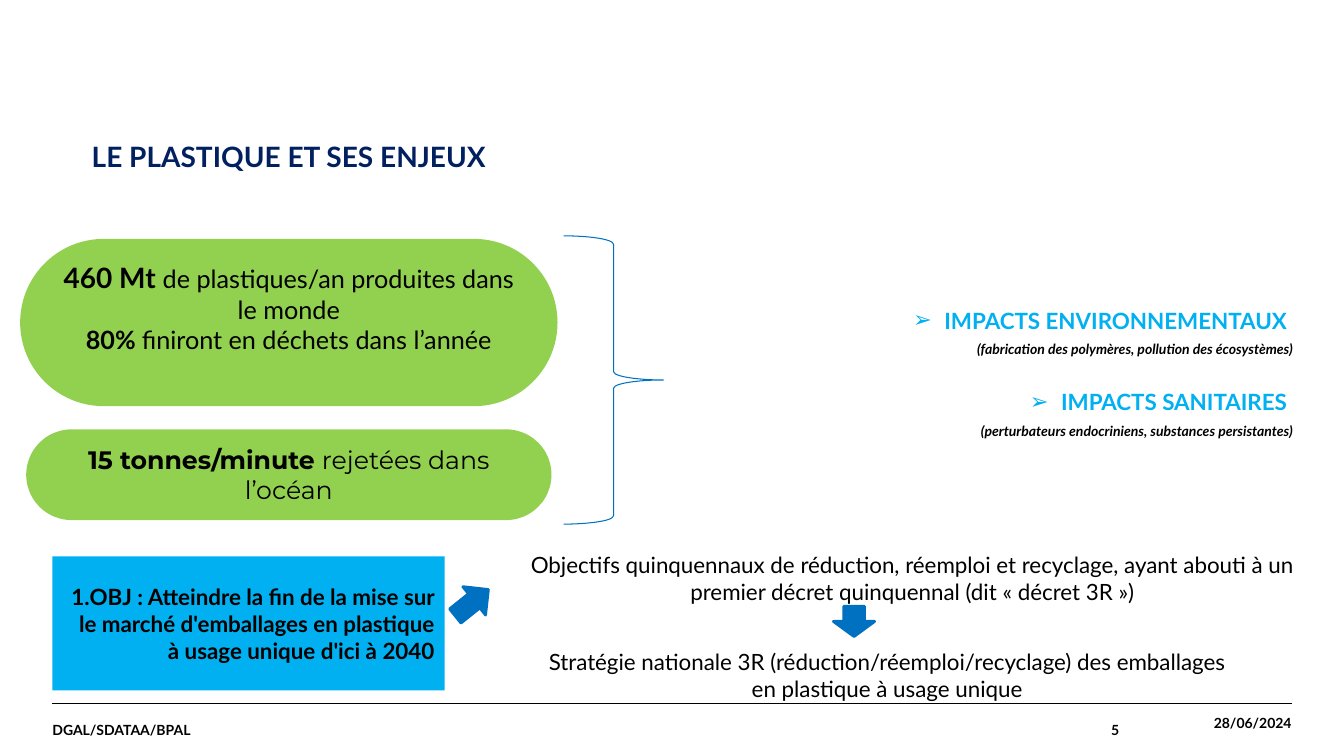
from dataclasses import dataclass

from lxml import etree
from pptx import Presentation
from pptx import util as u
from pptx.dml.color import RGBColor
from pptx.enum import shapes, text
from pptx.oxml.ns import qn

EMU_PER_PX = 9144
LEFT, CENTER, RIGHT = text.PP_ALIGN.LEFT, text.PP_ALIGN.CENTER, text.PP_ALIGN.RIGHT
TOP, MIDDLE = text.MSO_ANCHOR.TOP, text.MSO_ANCHOR.MIDDLE
ARROW_BULLET = ("buChar", {"char": "➢"})
NUMBER = ("buAutoNum", {"type": "arabicPeriod"})


@dataclass(frozen=True)
class Theme:
    font: str = "Lato"
    accent_font: str = "Montserrat"
    black: str = "000000"
    navy: str = "002060"
    blue: str = "0070C0"
    sky: str = "00B0F0"
    green: str = "92D050"
    title: int = 20
    figure: int = 18
    body: int = 16
    small: int = 10


THEME = Theme()


def px(length):
    return u.Emu(length * EMU_PER_PX)


@dataclass
class Para:
    """A paragraph; runs are (words, font overrides) pairs."""
    runs: list
    size: int = THEME.body
    color: str = THEME.black
    bold: bool = None
    italic: bool = None
    font: str = THEME.font
    align: int = CENTER
    before: float = 0
    bullet: tuple = None
    indent: int = 0


class SlideBuilder:
    def __init__(self, slide, theme):
        self.slide = slide
        self.theme = theme

    def fill_text(self, frame, paras, anchor=MIDDLE, insets=(10, 10, 10, 10)):
        frame.word_wrap = True
        frame.auto_size = text.MSO_AUTO_SIZE.NONE
        frame.vertical_anchor = anchor
        (frame.margin_left, frame.margin_top,
         frame.margin_right, frame.margin_bottom) = map(px, insets)
        for index, para in enumerate(paras):
            line = frame.paragraphs[0] if index == 0 else frame.add_paragraph()
            line.alignment = para.align
            line.space_before = u.Pt(para.before)
            self.set_bullet(line, para)
            line.font.name = para.font
            line.font.size = u.Pt(para.size)
            line.font.bold = para.bold
            line.font.italic = para.italic
            line.font.color.rgb = RGBColor.from_string(para.color)
            for words, overrides in para.runs:
                run = line.add_run()
                run.text = words
                if "size" in overrides:
                    run.font.size = u.Pt(overrides["size"])
                if "bold" in overrides:
                    run.font.bold = overrides["bold"]

    def set_bullet(self, line, para):
        props = line._p.get_or_add_pPr()
        props.set("marL", str(px(para.indent)))
        props.set("indent", str(px(-para.indent)))
        tag, attributes = para.bullet or ("buNone", {})
        etree.SubElement(props, qn(f"a:{tag}"), attributes)

    def placeholder(self, index, box, paras, fill=None, **layout):
        holder = self.slide.placeholders[index]
        holder.left, holder.top, holder.width, holder.height = map(px, box)
        if fill:
            holder.fill.solid()
            holder.fill.fore_color.rgb = RGBColor.from_string(fill)
        self.fill_text(holder.text_frame, paras, **layout)

    def label(self, box, paras, **layout):
        area = self.slide.shapes.add_textbox(*map(px, box))
        self.fill_text(area.text_frame, paras, **layout)

    def shape(self, kind, box, fill=None, line=None, width=0, rotation=0):
        drawn = self.slide.shapes.add_shape(kind, *map(px, box))
        drawn.shadow.inherit = False
        drawn.rotation = rotation
        if fill:
            drawn.fill.solid()
            drawn.fill.fore_color.rgb = RGBColor.from_string(fill)
        else:
            drawn.fill.background()
        if line:
            drawn.line.color.rgb = RGBColor.from_string(line)
            drawn.line.width = u.Pt(width)
        else:
            drawn.line.fill.background()
        return drawn

    def pill(self, box, paras, **layout):
        rounded = self.shape(shapes.MSO_SHAPE.ROUNDED_RECTANGLE, box, self.theme.green)
        rounded.adjustments[0] = 0.5
        self.fill_text(rounded.text_frame, paras, **layout)

    def arrow(self, box, rotation):
        self.shape(shapes.MSO_SHAPE.RIGHT_ARROW, box, self.theme.blue,
                   self.theme.blue, 2, rotation)

    def rule(self, left, right, y):
        line = self.slide.shapes.add_connector(
            shapes.MSO_CONNECTOR.STRAIGHT, px(left), px(y), px(right), px(y))
        line.line.color.rgb = RGBColor.from_string(self.theme.black)
        line.line.width = u.Pt(0.8)
        etree.SubElement(line._element.spPr, qn("a:effectLst"))


def main():
    deck = Presentation()
    deck.slide_width, deck.slide_height = px(1333), px(750)
    builder = SlideBuilder(deck.slides.add_slide(deck.slide_layouts[3]), THEME)

    builder.rule(52, 1281, 698)
    for words, box, align in (
            ("DGAL/SDATAA/BPAL", (52, 698, 861, 52), LEFT),
            ("5", (913, 698, 197, 52), RIGHT),
            ("28/06/2024", (1110, 691, 171, 52), RIGHT)):
        builder.label(box, [Para([(words, {})], THEME.small, bold=True, align=align)],
                      insets=(0, 0, 0, 0))

    builder.placeholder(
        0, (91, 138, 1203, 60),
        [Para([("LE PLASTIQUE ET SES ENJEUX", {})], THEME.title, THEME.navy,
              bold=True, align=LEFT)],
        anchor=TOP, insets=(0, 0, 0, 0))

    strong = {"bold": True}
    builder.pill((26, 426, 521, 90), [
        Para([("15 tonnes/minute ", strong), ("rejetées dans l’océan", {})],
             THEME.figure, font=THEME.accent_font)])
    builder.pill((20, 237, 533, 166), [
        Para([("460 Mt ", {"bold": True, "size": THEME.title}),
              ("de plastiques/an produites dans le monde", {})], THEME.figure),
        Para([("80% ", strong), ("finiront en déchets dans l’année", {})],
             THEME.figure)],
        insets=(10, 10, 10, 40))
    builder.shape(shapes.MSO_SHAPE.RIGHT_BRACE, (559, 234, 99, 286),
                  line=THEME.blue, width=0.75)

    impacts = []
    for heading, detail, gap in (
            ("IMPACTS ENVIRONNEMENTAUX ",
             "(fabrication des polymères, pollution des écosystèmes)", 0),
            ("IMPACTS SANITAIRES ",
             "(perturbateurs endocriniens, substances persistantes)", 22)):
        impacts += [
            Para([(heading, {})], color=THEME.sky, bold=True, align=RIGHT,
                 before=gap, bullet=ARROW_BULLET, indent=31),
            Para([(detail, {})], THEME.small, bold=True, italic=True,
                 align=RIGHT, before=5)]
    builder.placeholder(1, (665, 269, 627, 202), impacts)

    builder.placeholder(
        2, (52, 552, 389, 133),
        [Para([("OBJ : Atteindre la fin de la mise sur le marché d'emballages "
                "en plastique à usage unique d'ici à 2040", {})],
              bold=True, align=RIGHT, bullet=NUMBER, indent=16)],
        fill=THEME.sky)

    for words, box in (
            ("Stratégie nationale 3R (réduction/réemploi/recyclage) des emballages "
             "en plastique à usage unique", (528, 638, 704, 64)),
            ("Objectifs quinquennaux de réduction, réemploi et recyclage, ayant abouti "
             "à un premier décret quinquennal (dit « décret 3R »)", (495, 542, 820, 64))):
        builder.label(box, [Para([(words, {})])], anchor=TOP, insets=(10, 5, 10, 5))

    builder.arrow((447, 580, 42, 36), 321.3)
    builder.arrow((832, 596, 30, 41), 90)
    deck.save("out.pptx")


if __name__ == "__main__":
    main()
